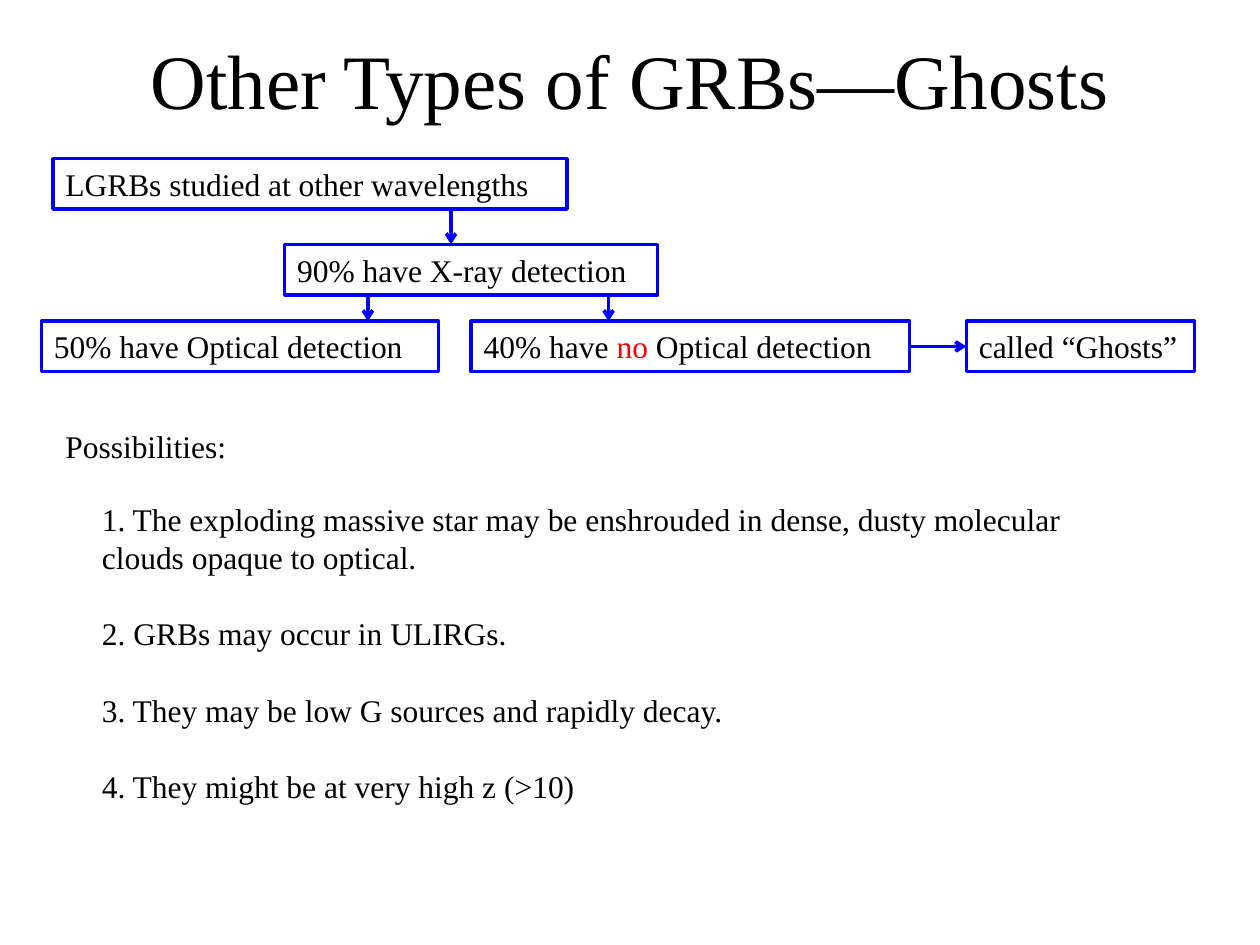
from lxml import etree
from pptx import Presentation
from pptx import util as u
from pptx.dml import color
from pptx.enum import shapes, text
from pptx.oxml import ns

FONT = "Times New Roman"
BLACK, BLUE, RED = "000000", "0000FF", "FF0000"
BOX_HEIGHT = 0.4
ROWS = (1.26, 1.94, 2.55)


def rgb(value):
    return color.RGBColor.from_string(value)


def write(shape, paragraphs, size=18, align=text.PP_ALIGN.LEFT, gap=0):
    frame = shape.text_frame
    frame.word_wrap = True
    for index, spans in enumerate(paragraphs):
        para = frame.paragraphs[0] if index == 0 else frame.add_paragraph()
        para.alignment = align
        para.space_before = u.Pt(gap if index else 0)
        for words, shade in spans:
            span = para.add_run()
            span.text = words
            span.font.name = FONT
            span.font.size = u.Pt(size)
            span.font.color.rgb = rgb(shade)


def set_line(item):
    item.line.color.rgb = rgb(BLUE)
    item.line.width = u.Pt(2)


def add_title(page, left, top, width, height):
    title = page.shapes.title
    title.left, title.top = u.Inches(left), u.Inches(top)
    title.width, title.height = u.Inches(width), u.Inches(height)
    title.text_frame.vertical_anchor = text.MSO_ANCHOR.MIDDLE
    write(title, [[("Other Types of GRBs—Ghosts", BLACK)]], 44, text.PP_ALIGN.CENTER)


def add_step(page, left, top, width, spans):
    box = page.shapes.add_shape(
        shapes.MSO_SHAPE.RECTANGLE,
        u.Inches(left), u.Inches(top), u.Inches(width), u.Inches(BOX_HEIGHT))
    box.shadow.inherit = False
    box.fill.background()
    set_line(box)
    box.text_frame.vertical_anchor = text.MSO_ANCHOR.TOP
    write(box, [spans])


def add_arrow(page, *ends):
    arrow = page.shapes.add_connector(
        shapes.MSO_CONNECTOR.STRAIGHT, *(u.Inches(end) for end in ends))
    set_line(arrow)
    etree.SubElement(arrow.line._get_or_add_ln(), ns.qn("a:tailEnd"), type="arrow")
    etree.SubElement(arrow._element.spPr, ns.qn("a:effectLst"))


def add_flow(page):
    first, second, third = ROWS
    add_step(page, 0.42, first, 4.08, [("LGRBs studied at other wavelengths", BLACK)])
    add_step(page, 2.26, second, 2.96, [("90% have X-ray detection", BLACK)])
    add_step(page, 0.33, third, 3.15, [("50% have Optical detection", BLACK)])
    add_step(page, 3.74, third, 3.48, [
        ("40% have", BLACK), (" no ", RED), ("Optical detection", BLACK)])
    add_step(page, 7.67, third, 1.81, [("called “Ghosts”", BLACK)])
    for x, start, end in ((3.58, first, second), (2.92, second, third), (4.83, second, third)):
        add_arrow(page, x, start + BOX_HEIGHT, x, end)
    middle = third + BOX_HEIGHT / 2
    add_arrow(page, 7.22, middle, 7.67, middle)


def add_text(page, left, top, width, height, lines, gap=0):
    box = page.shapes.add_textbox(
        u.Inches(left), u.Inches(top), u.Inches(width), u.Inches(height))
    write(box, [[(line, BLACK)] for line in lines], gap=gap)


def main():
    deck = Presentation()
    deck.slide_width, deck.slide_height = u.Inches(10), u.Inches(7.5)
    page = deck.slides.add_slide(deck.slide_layouts.get_by_name("Title Only"))
    add_title(page, 0.5, 0, 9, 1.25)
    add_flow(page)
    add_text(page, 0.42, 3.34, 1.56, 0.4, ["Possibilities:"])
    add_text(page, 0.71, 3.92, 7.82, 2.52, [
        "1. The exploding massive star may be enshrouded in dense, dusty molecular "
        "clouds opaque to optical.",
        "2. GRBs may occur in ULIRGs.",
        "3. They may be low G sources and rapidly decay.",
        "4. They might be at very high z (>10)",
    ], gap=22)
    deck.save("out.pptx")


if __name__ == "__main__":
    main()
